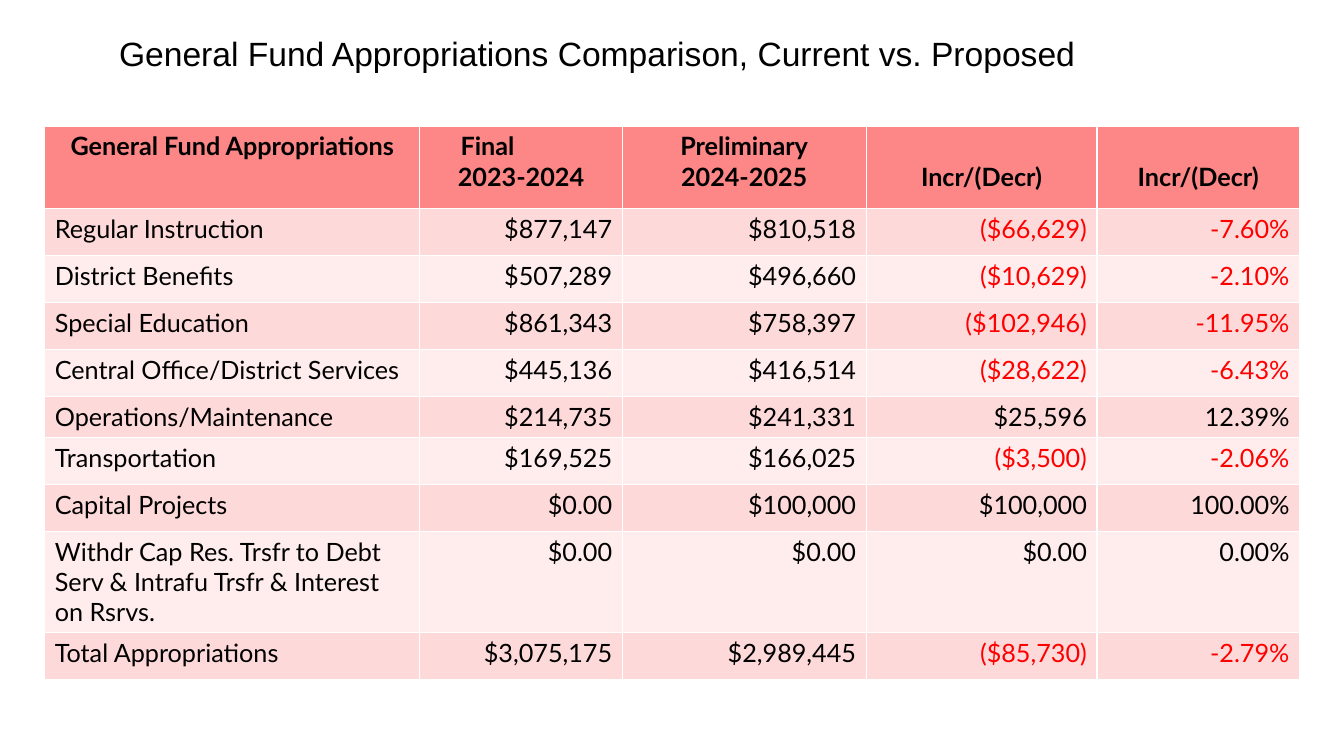
from pptx import Presentation
from pptx.dml.color import RGBColor
from pptx.enum.text import MSO_ANCHOR, PP_ALIGN
from pptx.util import Pt

LEFT, CENTER, RIGHT = PP_ALIGN.LEFT, PP_ALIGN.CENTER, PP_ALIGN.RIGHT
MIDDLE = MSO_ANCHOR.MIDDLE
COLORS = {"text": "000000", "decrease": "FF0000", "header": "FD8686",
          "odd": "FED9D9", "even": "FFEDED"}
TITLE = "General Fund Appropriations Comparison, Current vs. Proposed"
HEADINGS = [["General Fund Appropriations"], ["Final", "2023-2024"],
            ["Preliminary", "2024-2025"], ["Incr/(Decr)"], ["Incr/(Decr)"]]
APPROPRIATIONS = [
    ("Regular Instruction", "$877,147", "$810,518", "($66,629)", "-7.60%"),
    ("District Benefits", "$507,289", "$496,660", "($10,629)", "-2.10%"),
    ("Special Education", "$861,343", "$758,397", "($102,946)", "-11.95%"),
    ("Central Office/District Services", "$445,136", "$416,514", "($28,622)", "-6.43%"),
    ("Operations/Maintenance", "$214,735", "$241,331", "$25,596", "12.39%"),
    ("Transportation", "$169,525", "$166,025", "($3,500)", "-2.06%"),
    ("Capital Projects", "$0.00", "$100,000", "$100,000", "100.00%"),
    ("Withdr Cap Res. Trsfr to Debt Serv & Intrafu Trsfr & Interest on Rsrvs.",
     "$0.00", "$0.00", "$0.00", "0.00%"),
    ("Total Appropriations", "$3,075,175", "$2,989,445", "($85,730)", "-2.79%"),
]
COLUMN_WIDTHS = [267.8, 144.7, 174.2, 164.9, 144.7]
ROW_HEIGHTS = [59, 33.6, 33.6, 33.6, 33.6, 29, 33.6, 33.6, 50.4, 33.6]


def add_run(paragraph, text, size, font, color="text", bold=False):
    run = paragraph.add_run()
    run.text = text
    run.font.size = Pt(size)
    run.font.name = font
    run.font.bold = bold
    run.font.color.rgb = RGBColor.from_string(COLORS[color])


def fill_cell(cell, lines, fill, align, color="text", bold=False):
    cell.fill.solid()
    cell.fill.fore_color.rgb = RGBColor.from_string(COLORS[fill])
    frame = cell.text_frame
    for number, line in enumerate(lines):
        paragraph = frame.add_paragraph() if number else frame.paragraphs[0]
        paragraph.alignment = align
        add_run(paragraph, line, 18, "Lato", color, bold)


prs = Presentation()
prs.slide_width, prs.slide_height = Pt(960), Pt(540)
slide = prs.slides.add_slide(prs.slide_layouts[5])

# Title
title = slide.shapes.title
title.left, title.top, title.width, title.height = Pt(77.8), Pt(20), Pt(756), Pt(39)
title.text_frame.word_wrap = True
title.text_frame.vertical_anchor = MIDDLE
heading = title.text_frame.paragraphs[0]
heading.alignment = LEFT
heading.line_spacing = 0.9
add_run(heading, TITLE, 24, "Arial")

# Table grid
table = slide.shapes.add_table(
    len(ROW_HEIGHTS), len(COLUMN_WIDTHS), Pt(32), Pt(90),
    Pt(sum(COLUMN_WIDTHS)), Pt(sum(ROW_HEIGHTS))).table
for column, width in zip(table.columns, COLUMN_WIDTHS):
    column.width = Pt(width)
for row, height in zip(table.rows, ROW_HEIGHTS):
    row.height = Pt(height)

# Header row: the change columns sit level with the school years
for c, lines in enumerate(HEADINGS):
    header = table.cell(0, c)
    fill_cell(header, lines, "header", CENTER, bold=True)
    if c >= 3:
        header.margin_top = Pt(25.2)

# "Final" is indented from the left instead of centred
final = table.cell(0, 1).text_frame.paragraphs[0]
final.alignment = LEFT
final._p.get_or_add_pPr().set("marL", str(Pt(22)))

# Appropriation rows, with decreases in red
for r, values in enumerate(APPROPRIATIONS, start=1):
    for c, value in enumerate(values):
        fill_cell(table.cell(r, c), [value], "odd" if r % 2 else "even",
                  RIGHT if c else LEFT,
                  "decrease" if value.startswith(("(", "-")) else "text")

prs.save("out.pptx")
